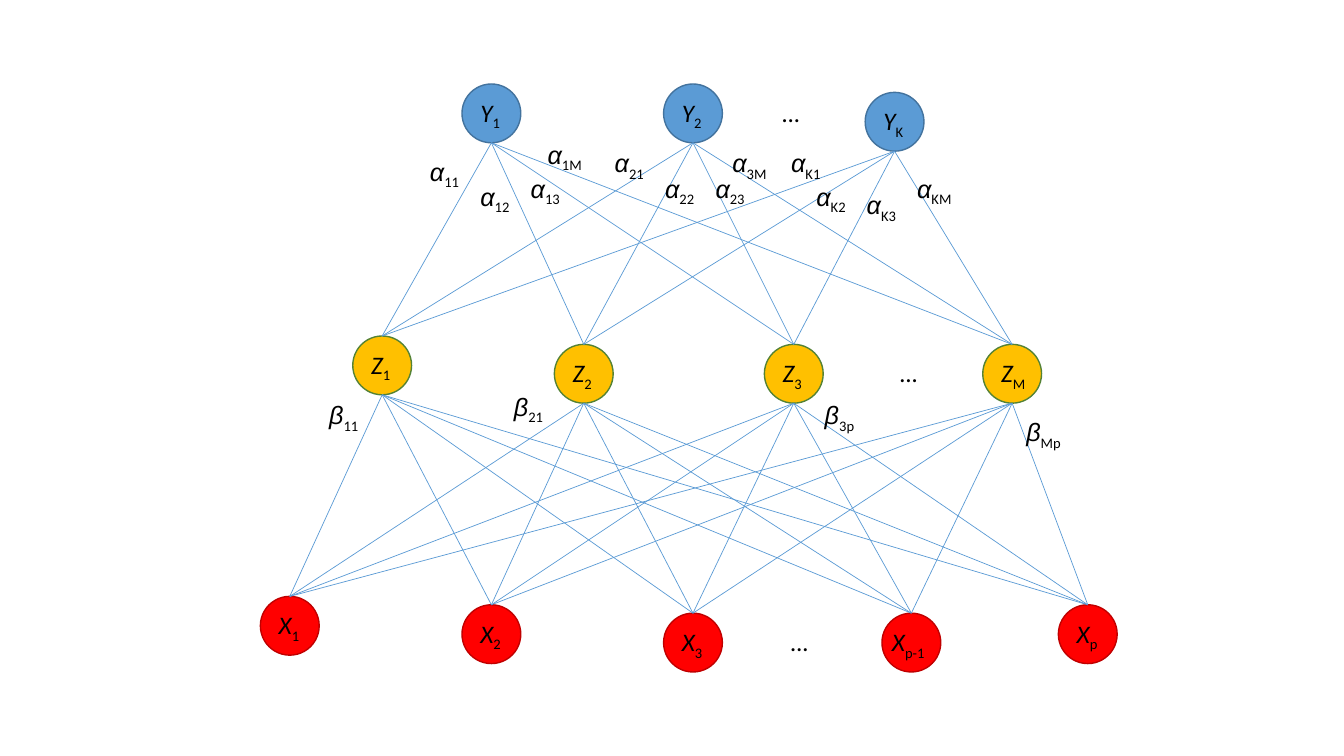
from itertools import product

from lxml import etree
from pptx import Presentation
from pptx import util as u
from pptx.dml.color import RGBColor
from pptx.enum import shapes, text
from pptx.oxml import ns

BLACK = RGBColor(0x00, 0x00, 0x00)
BLUE = RGBColor(0x5B, 0x9B, 0xD5)
DARK_BLUE = RGBColor(0x43, 0x73, 0x9E)
AMBER = RGBColor(0xFF, 0xC0, 0x00)
GREEN = RGBColor(0x54, 0x82, 0x35)
RED = RGBColor(0xFF, 0x00, 0x00)
DARK_RED = RGBColor(0xC0, 0x00, 0x00)

CELL = u.Inches(1) / 12
COLUMNS, ROWS = 160, 90
NODE = 7
LABEL_HEIGHT = 4.85

OUTPUTS = [("1", 55, 10), ("2", 79, 10), ("K", 103, 11)]
HIDDEN = [("1", 42, 40), ("2", 66, 41), ("3", 91, 41), ("M", 117, 41)]
INPUTS = [("1", 31, 71), ("2", 55, 72), ("3", 79, 73), ("p-1", 105, 73), ("p", 126, 72)]
LAYERS = [
    ("Y", OUTPUTS, BLUE, DARK_BLUE),
    ("Z", HIDDEN, AMBER, GREEN),
    ("X", INPUTS, RED, DARK_RED),
]
LABEL_WIDTHS = {"M": 5.5, "p-1": 6.75}
ELLIPSES = [(92, 11), (106, 42), (93, 74)]
WEIGHTS = [
    ("α", "11", 50, 18), ("α", "12", 56, 21), ("α", "13", 62, 20), ("α", "1M", 64, 16),
    ("α", "21", 72, 17), ("α", "22", 78, 20), ("α", "23", 84, 20), ("α", "3M", 86, 17),
    ("α", "K1", 93, 17), ("α", "K2", 96, 21), ("α", "K3", 102, 22), ("α", "KM", 108, 20),
    ("β", "11", 38, 47), ("β", "21", 60, 46), ("β", "3p", 97, 47), ("β", "Mp", 121, 49),
]


def cells(*counts):
    """Convert grid cells to slide lengths."""
    return [u.Emu(round(count * CELL)) for count in counts]


def add_node(slide, column, row, fill, outline):
    """Draw one network node as a circle."""
    node = slide.shapes.add_shape(shapes.MSO_SHAPE.OVAL, *cells(column, row, NODE, NODE))
    node.shadow.inherit = False
    node.fill.solid()
    node.fill.fore_color.rgb = fill
    node.line.color.rgb = outline
    node.line.width = u.Pt(1)


def add_text(slide, column, row, symbol, subscript="", width=8, font="Calibri", wrap=False):
    """Write an italic symbol with an optional upright subscript."""
    box = slide.shapes.add_textbox(*cells(column, row, width, LABEL_HEIGHT))
    frame = box.text_frame
    frame.word_wrap = wrap
    frame.auto_size = text.MSO_AUTO_SIZE.SHAPE_TO_FIT_TEXT
    paragraph = frame.paragraphs[0]
    for content, name, italic in ((symbol, font, True), (subscript, "Calibri", False)):
        if not content:
            continue
        run = paragraph.add_run()
        run.text = content
        run.font.name = name
        run.font.size = u.Pt(18)
        run.font.italic = italic
        run.font.color.rgb = BLACK
        if not italic:
            run.font._element.set("baseline", "-25000")


def add_link(slide, upper, lower):
    """Connect the bottom of an upper node to the top of a lower node."""
    _, upper_column, upper_row = upper
    _, lower_column, lower_row = lower
    ends = cells(upper_column + NODE / 2, upper_row + NODE, lower_column + NODE / 2, lower_row)
    link = slide.shapes.add_connector(shapes.MSO_CONNECTOR.STRAIGHT, *ends)
    link.line.color.rgb = BLUE
    link.line.width = u.Pt(0.5)
    etree.SubElement(link._element.spPr, ns.qn("a:effectLst"))


def main():
    """Build the neural network slide."""
    presentation = Presentation()
    presentation.slide_width, presentation.slide_height = cells(COLUMNS, ROWS)
    slide = presentation.slides.add_slide(presentation.slide_layouts[6])
    for symbol, nodes, fill, outline in LAYERS:
        for subscript, column, row in nodes:
            add_node(slide, column, row, fill, outline)
            indent = 0 if subscript == "p-1" else 1
            add_text(slide, column + indent, row + 1, symbol, subscript,
                     width=LABEL_WIDTHS.get(subscript, 5))
    for uppers, lowers in ((OUTPUTS, HIDDEN), (HIDDEN, INPUTS)):
        for upper, lower in product(uppers, lowers):
            add_link(slide, upper, lower)
    for column, row in ELLIPSES:
        add_text(slide, column, row, "…", width=4.5)
    for symbol, subscript, column, row in WEIGHTS:
        add_text(slide, column, row, symbol, subscript, font="Arial", wrap=True)
    presentation.save("out.pptx")


if __name__ == "__main__":
    main()
